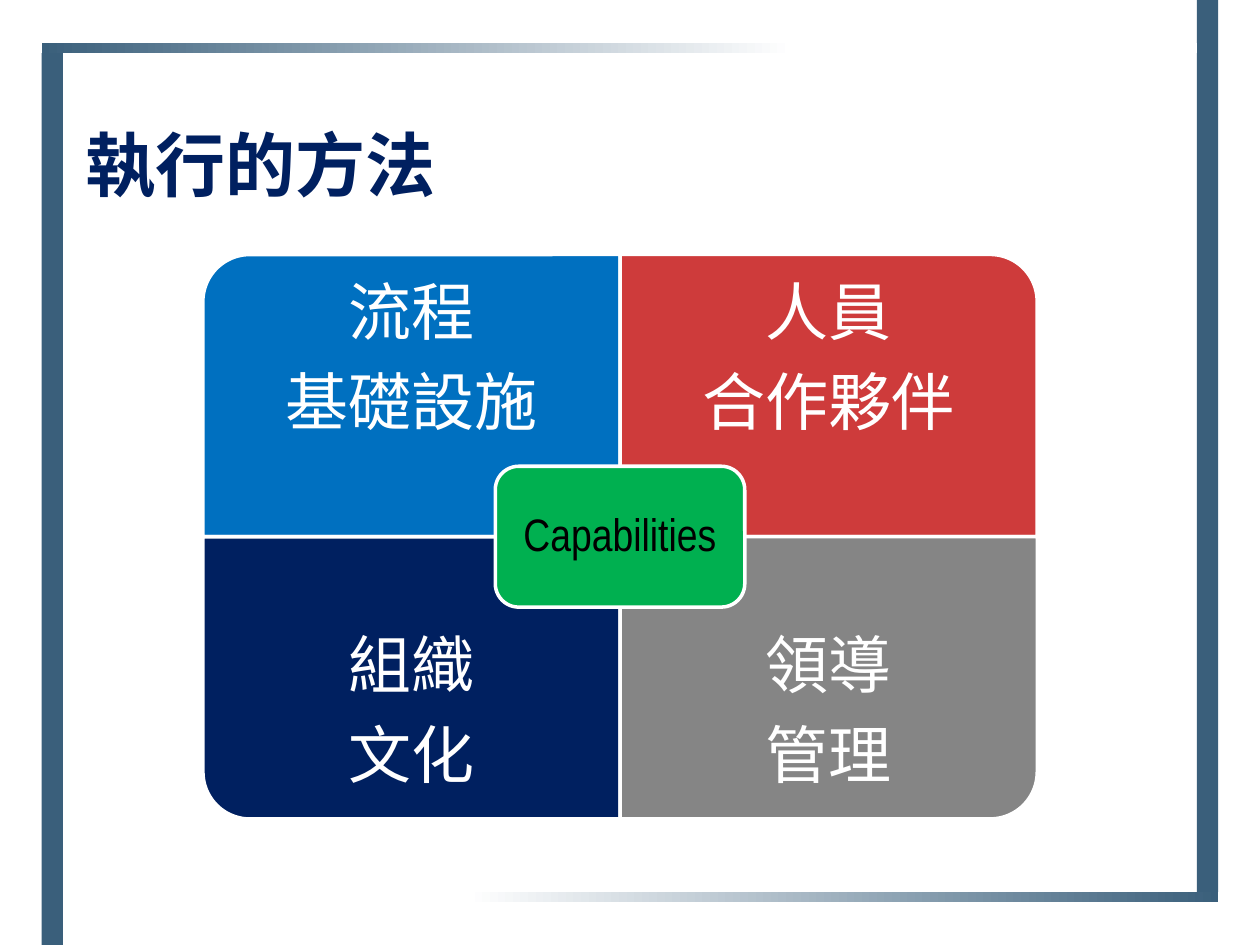
import pptx
import pptx.dml.color
import pptx.enum.shapes
import pptx.enum.text
import pptx.oxml.ns
import pptx.util
from lxml import etree

Cm = pptx.util.Cm
Pt = pptx.util.Pt
SHAPE = pptx.enum.shapes.MSO_SHAPE
ANCHOR = pptx.enum.text.MSO_ANCHOR
ALIGN = pptx.enum.text.PP_ALIGN
qn = pptx.oxml.ns.qn

NAVY, STEEL, WHITE = "002060", "3A5F7B", "FFFFFF"


def rgb(code):
    return pptx.dml.color.RGBColor.from_string(code)


def apply(target, values):
    for name, value in values.items():
        setattr(target, name, value)


class Deck:
    def __init__(self, width, height):
        self.presentation = pptx.Presentation()
        self.presentation.slide_width = Cm(width)
        self.presentation.slide_height = Cm(height)
        self.slide = None
        self.heading = {"name": "TeX Gyre Bonum", "size": Pt(40), "bold": True}
        self.label = {"name": "Arial Narrow"}

    def add_slide(self):
        layout = self.presentation.slide_layouts[5]
        self.slide = self.presentation.slides.add_slide(layout)

    def title(self, text, left, top, width, height):
        heading = self.slide.shapes.title
        apply(heading, {"left": Cm(left), "top": Cm(top),
                        "width": Cm(width), "height": Cm(height)})
        frame = heading.text_frame
        frame.text = text
        apply(frame, {"vertical_anchor": ANCHOR.BOTTOM, "word_wrap": True,
                      "auto_size": pptx.enum.text.MSO_AUTO_SIZE.NONE})
        paragraph = frame.paragraphs[0]
        paragraph.alignment = ALIGN.LEFT
        apply(paragraph.font, self.heading)
        paragraph.font.color.rgb = rgb(NAVY)

    def shape(self, kind, left, top, width, height, color, opacity=100, outlined=False):
        shape = self.slide.shapes.add_shape(
            kind, Cm(left), Cm(top), Cm(width), Cm(height))
        shape.shadow.inherit = False
        shape.fill.solid()
        shape.fill.fore_color.rgb = rgb(color)
        if opacity < 100:
            tint = shape._element.spPr.find(".//" + qn("a:srgbClr"))
            etree.SubElement(tint, qn("a:alpha"), val=str(opacity * 1000))
        if outlined:
            shape.line.color.rgb = rgb(WHITE)
            shape.line.width = Pt(2)
        else:
            shape.line.fill.background()
        return shape

    def fading_bar(self, left, top, width, height, angle):
        """Draw a bar that fades from steel blue to white along the angle."""
        bar = self.shape(SHAPE.RECTANGLE, left, top, width, height, STEEL)
        bar.fill.gradient()
        bar.fill.gradient_angle = angle
        for stop, color, position in zip(bar.fill.gradient_stops, (STEEL, WHITE), (0, 0.65)):
            stop.color.rgb = rgb(color)
            stop.position = position

    def quadrant(self, center_x, center_y, width, height, rotation, color, opacity):
        """Draw a panel whose one round corner is turned outwards."""
        if rotation % 180:
            width, height = height, width
        panel = self.shape(SHAPE.ROUND_1_RECTANGLE, center_x - width / 2,
                           center_y - height / 2, width, height, color, opacity, True)
        panel.rotation = rotation

    def text_box(self, lines, left, top, width, height, **style):
        box = self.slide.shapes.add_textbox(Cm(left), Cm(top), Cm(width), Cm(height))
        self.fill_text(box.text_frame, lines, **style)

    def fill_text(self, frame, lines, size, color, margin):
        apply(frame, {"word_wrap": True, "vertical_anchor": ANCHOR.MIDDLE})
        apply(frame, {f"margin_{side}": Cm(margin)
                      for side in ("left", "top", "right", "bottom")})
        frame.text = "\n".join(lines)
        for paragraph in frame.paragraphs:
            apply(paragraph, {"alignment": ALIGN.CENTER, "line_spacing": 0.9,
                              "space_after": Pt(0)})
            spacing = paragraph._p.pPr.find(qn("a:spcAft"))
            spacing.remove(spacing[0])
            etree.SubElement(spacing, qn("a:spcPct"), val="35000")
            apply(paragraph.font, {**self.label, "size": Pt(size)})
            paragraph.font.color.rgb = rgb(color)


def main():
    deck = Deck(25.4, 19.05)
    deck.add_slide()

    bar_width, bar_height = 0.43, 17.98
    deck.shape(SHAPE.RECTANGLE, 24.13, 0, bar_width, bar_height, STEEL)
    deck.shape(SHAPE.RECTANGLE, 0.84, 1.07, bar_width, bar_height, STEEL)
    deck.fading_bar(1.27, 17.98, 23.29, 0.21, 180)
    deck.fading_bar(0.84, 0.86, 23.29, 0.21, 0)
    deck.title("執行的方法", 1.47, 1.27, 22.43, 3)

    middle_x, middle_y = 12.5, 10.82
    width, height, text_height = 8.41, 5.69, 4.27
    # column side, row side, rotation, colour, opacity, lines
    quadrants = [
        (-1, -1, 270, "0070C0", 100, ["流程", "基礎設施"]),
        (1, -1, 0, "C00000", 77, ["人員", "合作夥伴"]),
        (-1, 1, 180, NAVY, 100, ["組織", "文化"]),
        (1, 1, 90, "0D0D0D", 50, ["領導", "管理"]),
    ]
    for column, row, rotation, color, opacity, lines in quadrants:
        center_x = middle_x + column * width / 2
        deck.quadrant(center_x, middle_y + row * height / 2,
                      width, height, rotation, color, opacity)
        text_center = middle_y + row * (height - text_height / 2)
        deck.text_box(lines, center_x - width / 2, text_center - text_height / 2,
                      width, text_height, size=36, color=WHITE, margin=0.71)

    hub_width, hub_height = 5.03, 2.84
    hub = deck.shape(SHAPE.ROUNDED_RECTANGLE, middle_x - hub_width / 2,
                     middle_y - hub_height / 2, hub_width, hub_height,
                     "00B050", outlined=True)
    deck.fill_text(hub.text_frame, ["Capabilities"], size=26, color="000000", margin=0.28)

    deck.presentation.save("out.pptx")


if __name__ == "__main__":
    main()
